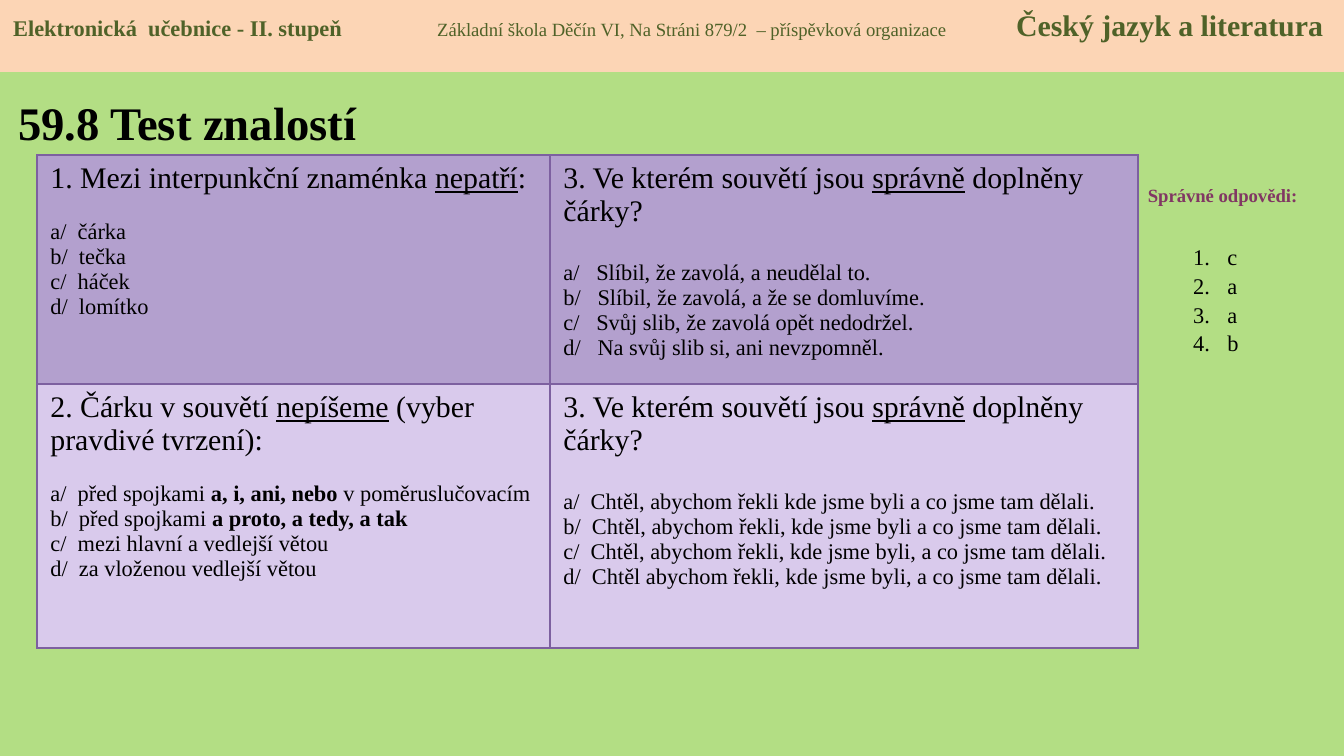
"""Build a quiz slide on Czech punctuation with a header band and an answer key."""
from dataclasses import dataclass

from lxml import etree
from pptx import Presentation
from pptx.dml.color import RGBColor
from pptx.enum.shapes import MSO_SHAPE
from pptx.enum.text import MSO_ANCHOR, PP_ALIGN
from pptx.oxml.ns import qn
from pptx.util import Pt

RECTANGLE = MSO_SHAPE.RECTANGLE
TOP, MIDDLE = MSO_ANCHOR.TOP, MSO_ANCHOR.MIDDLE
LEFT, CENTER = PP_ALIGN.LEFT, PP_ALIGN.CENTER
SCALE = 914400 / 134.4


@dataclass(frozen=True)
class Theme:
    font: str = "Times New Roman"
    background: str = "B3DE84"
    band: str = "FCD5B5"
    band_text: str = "4F6228"
    ink: str = "000000"
    key: str = "813763"
    border: str = "7D60A0"
    rows: tuple = ("B3A0CE", "D9CAEC")
    title: int = 25
    question: int = 16
    body: int = 12
    small: int = 10


def px(length):
    return round(length * SCALE)


def color(code):
    return RGBColor.from_string(code)


class SlideBuilder:
    def __init__(self, page, theme):
        self.page = page
        self.theme = theme
        fill = page.background.fill
        fill.solid()
        fill.fore_color.rgb = color(theme.background)

    def style(self, font, size, ink, bold=None):
        font.name, font.size, font.bold = self.theme.font, Pt(size), bold
        font.color.rgb = color(ink)

    def add_spans(self, para, spans, size, ink=None, bold=None):
        self.style(para.font, size, ink or self.theme.ink, bold)
        for text, mark in spans:
            span = para.add_run()
            span.text = text
            if mark == "bold":
                span.font.bold = True
            elif mark == "underline":
                span.font.underline = True

    def text(self, left, top, width, height, text, size, ink, align=LEFT, anchor=TOP):
        box = self.page.shapes.add_textbox(px(left), px(top), px(width), px(height))
        frame = box.text_frame
        frame.word_wrap = True
        frame.vertical_anchor = anchor
        para = frame.paragraphs[0]
        para.alignment = align
        self.add_spans(para, [(text, None)], size, ink, True)

    def numbered(self, left, top, width, height, items):
        box = self.page.shapes.add_textbox(px(left), px(top), px(width), px(height))
        frame = box.text_frame
        frame.word_wrap = True
        frame.margin_top = px(35)
        for index, item in enumerate(items):
            para = frame.add_paragraph() if index else frame.paragraphs[0]
            self.add_spans(para, [(item, None)], self.theme.body)
            if index:
                para.space_before = px(2)
            props = para._p.get_or_add_pPr()
            props.set("marL", str(px(34)))
            props.set("indent", str(-px(34)))
            bullet = etree.Element(qn("a:buAutoNum"), type="arabicPeriod")
            props.find(qn("a:defRPr")).addprevious(bullet)

    def band(self, width, height, parts, stops):
        box = self.page.shapes.add_shape(RECTANGLE, 0, 0, px(width), px(height))
        box.shadow.inherit = False
        box.fill.solid()
        box.fill.fore_color.rgb = color(self.theme.band)
        box.line.fill.background()
        frame = box.text_frame
        frame.vertical_anchor = TOP
        para = frame.paragraphs[0]
        para.alignment = LEFT
        for index, (text, size, bold) in enumerate(parts):
            span = para.add_run()
            span.text = "\t" + text if index else text
            self.style(span.font, size, self.theme.band_text, bold)
        tabs = etree.SubElement(para._p.get_or_add_pPr(), qn("a:tabLst"))
        for stop in stops:
            etree.SubElement(tabs, qn("a:tab"), pos=str(px(stop)), algn="l")

    def border(self, cell):
        props = cell._tc.get_or_add_tcPr()
        for index, side in enumerate(("lnL", "lnR", "lnT", "lnB")):
            line = etree.Element(qn("a:" + side), w=str(Pt(0.75)))
            fill = etree.SubElement(line, qn("a:solidFill"))
            etree.SubElement(fill, qn("a:srgbClr"), val=self.theme.border)
            props.insert(index, line)

    def quiz(self, left, top, widths, heights, cells):
        table = self.page.shapes.add_table(
            len(heights), len(widths), px(left), px(top), px(sum(widths)), px(sum(heights))
        ).table
        table.first_row = table.horz_banding = False
        for column, width in zip(table.columns, widths):
            column.width = px(width)
        for row, height, fill, contents in zip(table.rows, heights, self.theme.rows, cells):
            row.height = px(height)
            for cell, (question, gap, answers) in zip(row.cells, contents):
                cell.fill.solid()
                cell.fill.fore_color.rgb = color(fill)
                self.border(cell)
                frame = cell.text_frame
                self.add_spans(frame.paragraphs[0], question, self.theme.question)
                for index, spans in enumerate(answers):
                    para = frame.add_paragraph()
                    self.add_spans(para, spans, self.theme.body)
                    if index == 0:
                        para.space_before = px(gap)


def plain(*lines):
    return [[(line, None)] for line in lines]


def main():
    theme = Theme()
    deck = Presentation()
    deck.slide_width, deck.slide_height = px(1344), px(756)
    slide = SlideBuilder(deck.slides.add_slide(deck.slide_layouts[6]), theme)

    slide.text(5, 78, 429, 87, "59.8 Test znalostí", theme.title, theme.ink, anchor=MIDDLE)
    slide.text(1117, 177, 211, 36, "Správné odpovědi:", theme.small, theme.key, CENTER)

    commas = [("3. Ve kterém souvětí jsou ", None), ("správně", "underline"),
              (" doplněny čárky?", None)]
    marks = [("1. Mezi interpunkční znaménka ", None), ("nepatří", "underline"), (":", None)]
    clauses = [("2. Čárku v souvětí ", None), ("nepíšeme", "underline"),
               (" (vyber pravdivé tvrzení):", None)]
    conjunctions = [
        [("a/  před spojkami ", None), ("a, i, ani, nebo ", "bold"), ("v poměruslučovacím", None)],
        [("b/  před spojkami ", None), ("a proto, a tedy, a tak", "bold")],
        *plain("c/  mezi hlavní a vedlejší větou", "d/  za vloženou vedlejší větou"),
    ]
    promises = plain(
        "a/   Slíbil, že zavolá, a neudělal to.",
        "b/   Slíbil, že zavolá, a že se domluvíme.",
        "c/   Svůj slib, že zavolá opět nedodržel.",
        "d/   Na svůj slib si, ani nevzpomněl.",
    )
    wishes = plain(
        "a/  Chtěl, abychom řekli kde jsme byli a co jsme tam dělali.",
        "b/  Chtěl, abychom řekli, kde jsme byli a co jsme tam dělali.",
        "c/  Chtěl, abychom řekli, kde jsme byli, a co jsme tam dělali.",
        "d/  Chtěl abychom řekli, kde jsme byli, a co jsme tam dělali.",
    )
    symbols = plain("a/  čárka", "b/  tečka", "c/  háček", "d/  lomítko")
    slide.quiz(37, 155, (513, 588), (229, 264), [
        [(marks, 25, symbols), (commas, 33, promises)],
        [(clauses, 25, conjunctions), (commas, 33, wishes)],
    ])
    slide.numbered(1180, 208, 74, 176, "caab")
    slide.band(1344, 72, [
        ("Elektronická  učebnice - II. stupeň", theme.body, True),
        ("Základní škola Děčín VI, Na Stráni 879/2  – příspěvková organizace", theme.small, False),
        ("Český jazyk a literatura", theme.question, True),
    ], (424, 1003))
    deck.save("out.pptx")


if __name__ == "__main__":
    main()
